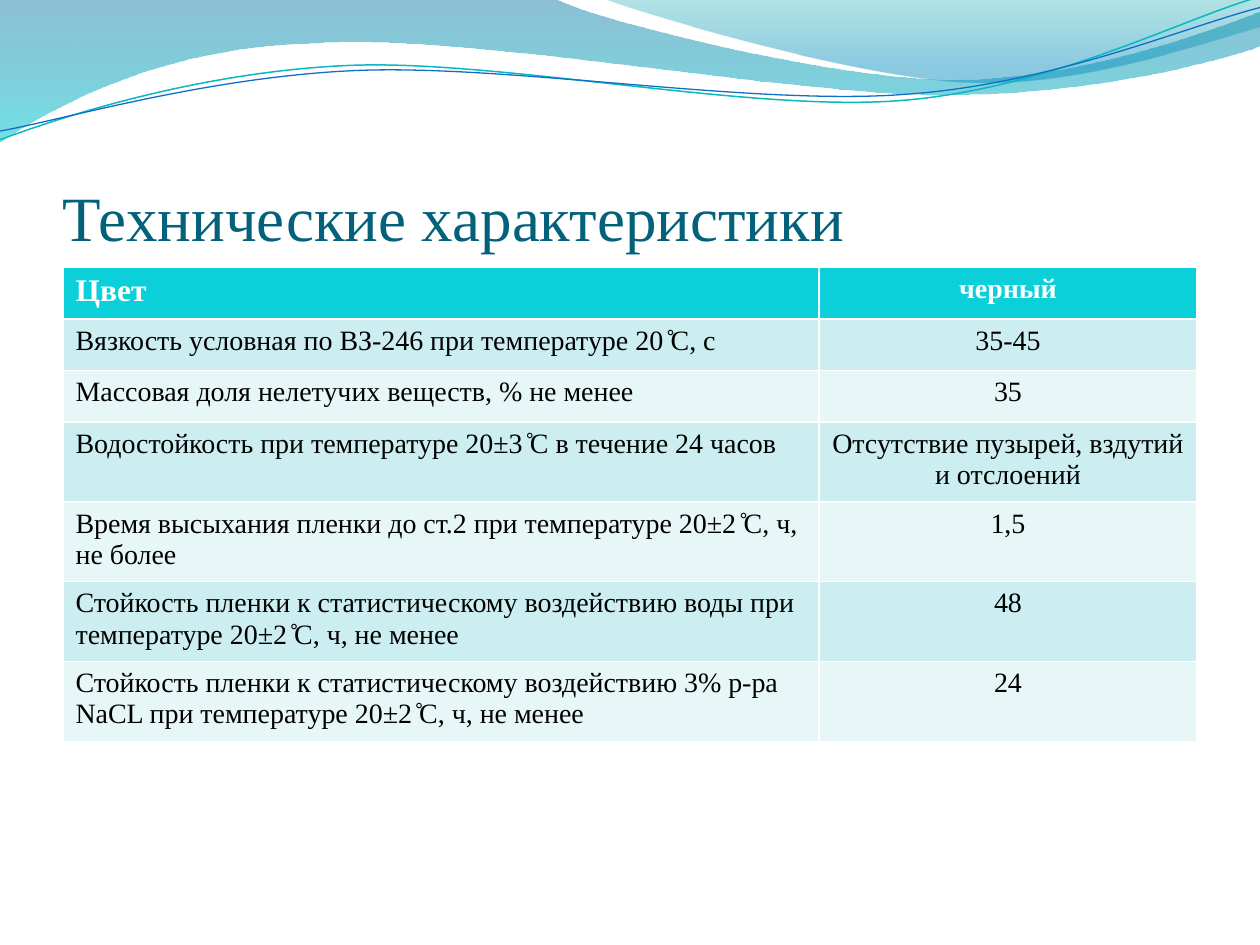
"""Build the technical characteristics slide with its wave header and table."""
from lxml import etree
from pptx import Presentation
from pptx.dml.color import RGBColor
from pptx.enum.text import MSO_ANCHOR, PP_ALIGN
from pptx.oxml.ns import qn
from pptx.util import Inches, Pt

LEFT, CENTER = PP_ALIGN.LEFT, PP_ALIGN.CENTER
BOTTOM = MSO_ANCHOR.BOTTOM
FONT = "Times New Roman"
COLORS = {
    "title": "04617B", "header": "0BD0D9", "dark_band": "CCEEF1", "light_band": "E7F7F8",
    "white": "FFFFFF", "black": "000000", "teal_line": "0AB8BF", "blue_line": "0F6FC6",
    "wave_blue": "0074A1", "wave_cyan": "00C6CF", "crest_teal": "00A1A9", "crest_blue": "008BBF",
}


def add_curve(shapes, start, segments, closed):
    """Draw a freeform from line segments (2 numbers) and cubic segments (6 numbers)."""
    builder = shapes.build_freeform(Inches(start[0]), Inches(start[1]))
    ends = [(Inches(segment[-2]), Inches(segment[-1])) for segment in segments]
    builder.add_line_segments(ends, close=closed)
    shape = builder.convert_to_shape()
    shape.shadow.inherit = False
    line_nodes = list(shape._element.spPr.iter(qn("a:lnTo")))
    for node, segment in zip(line_nodes, segments):
        if len(segment) == 6:
            curve = etree.Element(qn("a:cubicBezTo"))
            for x, y in zip(segment[::2], segment[1::2]):
                etree.SubElement(curve, qn("a:pt"), x=str(Inches(x) - shape.left),
                                 y=str(Inches(y) - shape.top))
            node.getparent().replace(node, curve)
    return shape


def add_text(paragraph, text, size, color, bold=False):
    """Add one formatted run to a paragraph."""
    run = paragraph.add_run()
    run.text = text
    run.font.name = FONT
    run.font.size = Pt(size)
    run.font.bold = bold
    run.font.color.rgb = RGBColor.from_string(COLORS[color])


presentation = Presentation()
presentation.slide_width = Inches(10)
presentation.slide_height = Inches(7.5)
slide = presentation.slides.add_slide(presentation.slide_layouts[6])

waves = [
    ((0, 0), [(4.4, -0.01), (4.76, 0.17, 6.64, 0.63, 7.58, 0.63),
              (8.53, 0.63, 9.58, 0.26, 10, 0.09), (10.01, 0.36),
              (9.83, 0.44, 8.7, 0.76, 7.46, 0.75), (6.22, 0.75, 3.82, 0.28, 2.57, 0.34),
              (1.29, 0.36, 0.46, 0.83, -0.01, 1.13)],
     [(0, "wave_blue", 45), (1, "wave_cyan", 55)]),
    ((4.79, -0.01), [(5.09, 0.11, 6.82, 0.62, 7.69, 0.65),
                     (8.56, 0.69, 9.61, 0.32, 10, 0.21), (10, 0)],
     [(0, "crest_teal", 30), (0.8, "crest_blue", 45)]),
]
for start, segments, stops in waves:
    wave = add_curve(slide.shapes, start, segments, True)
    wave.line.fill.background()
    wave.fill.gradient()
    wave.fill.gradient_angle = 270
    for gradient_stop, (position, color, _) in zip(wave.fill.gradient_stops, stops):
        gradient_stop.position = position
        gradient_stop.color.rgb = RGBColor.from_string(COLORS[color])
    for color_node, (_, _, opacity) in zip(wave._element.spPr.iter(qn("a:srgbClr")), stops):
        etree.SubElement(color_node, qn("a:alpha"), val=str(opacity * 1000))

strands = [
    ((0, 1.11), [(0.48, 0.93, 1.58, 0.57, 2.77, 0.52), (3.95, 0.47, 5.93, 0.89, 7.13, 0.8),
                 (8.33, 0.71, 9.38, 0.15, 9.98, -0.02)], "teal_line", 0.85),
    ((0, 1.04), [(0.47, 0.96, 1.64, 0.61, 2.83, 0.56), (4.03, 0.51, 5.97, 0.84, 7.17, 0.75),
                 (8.36, 0.67, 9.41, 0.21, 10, 0.06)], "blue_line", 0.75),
]
for start, segments, color, width in strands:
    strand = add_curve(slide.shapes, start, segments, False)
    strand.fill.background()
    strand.line.color.rgb = RGBColor.from_string(COLORS[color])
    strand.line.width = Pt(width)

title = slide.shapes.add_textbox(Inches(0.5), Inches(0.77), Inches(9), Inches(1.25))
title_frame = title.text_frame
title_frame.word_wrap = True
title_frame.vertical_anchor = BOTTOM
title_frame.margin_left = title_frame.margin_right = title_frame.margin_bottom = 0
title_frame.margin_top = Inches(0.05)
add_text(title_frame.paragraphs[0], "Технические характеристики", 36, "title")

rows = [
    ("Цвет", "черный"),
    ("Вязкость условная по ВЗ-246 при температуре 20 ̊С, с", "35-45"),
    ("Массовая доля нелетучих веществ, % не менее", "35"),
    ("Водостойкость при температуре 20±3 ̊С в течение 24 часов",
     "Отсутствие пузырей, вздутий и отслоений"),
    ("Время высыхания пленки до ст.2 при температуре 20±2 ̊С, ч, не более", "1,5"),
    ("Стойкость пленки к статистическому воздействию воды при температуре 20±2 ̊С, ч, не менее",
     "48"),
    ("Стойкость пленки к статистическому воздействию 3% р-ра NaCL при температуре 20±2 ̊С, ч, не менее",
     "24"),
]
table_shape = slide.shapes.add_table(len(rows), 2, Inches(0.5), Inches(2.12), Inches(9), Inches(4.02))
table = table_shape.table
table.columns[0].width = Inches(6)
table.columns[1].width = Inches(3)
for row_index, texts in enumerate(rows):
    table.rows[row_index].height = Inches(0.41)
    is_header = row_index == 0
    band = "header" if is_header else ("light_band", "dark_band")[row_index % 2]
    for column_index, text in enumerate(texts):
        cell = table.cell(row_index, column_index)
        cell.fill.solid()
        cell.fill.fore_color.rgb = RGBColor.from_string(COLORS[band])
        paragraph = cell.text_frame.paragraphs[0]
        paragraph.alignment = (LEFT, CENTER)[column_index]
        size = 18 if is_header and column_index == 0 else 16
        add_text(paragraph, text, size, "white" if is_header else "black", is_header)
table_shape.height = Inches(4.02)

presentation.save("out.pptx")
